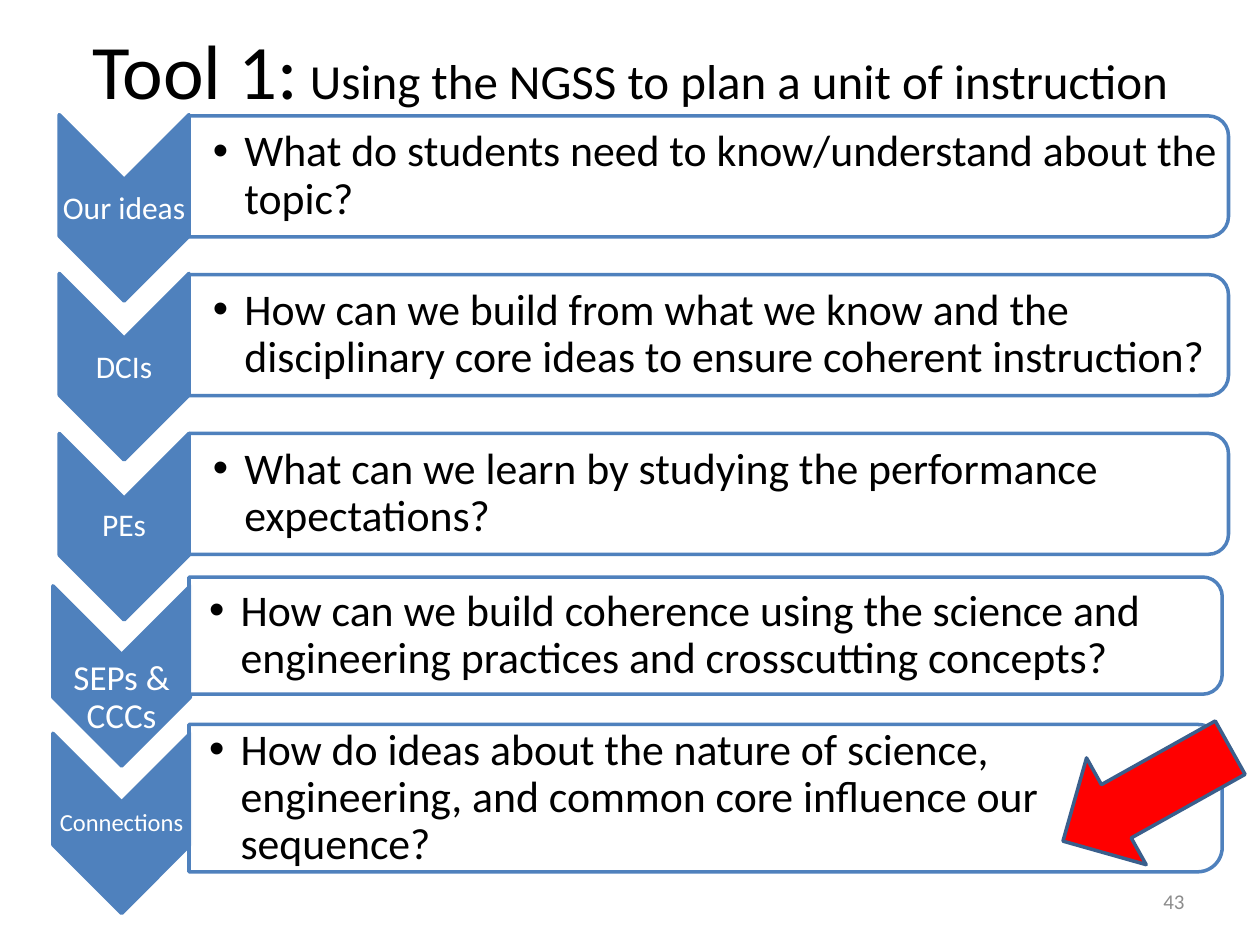
import pptx
import pptx.util
import pptx.dml.color
import pptx.enum.shapes
import pptx.enum.text
import pptx.oxml
import pptx.oxml.ns
import lxml.etree

Inches = pptx.util.Inches
Pt = pptx.util.Pt
RGBColor = pptx.dml.color.RGBColor
SHAPE = pptx.enum.shapes.MSO_SHAPE
ALIGN = pptx.enum.text.PP_ALIGN
qn = pptx.oxml.ns.qn

BLUE = RGBColor(0x4F, 0x81, 0xBD)
DARK_BLUE = RGBColor(0x3A, 0x5F, 0x8C)
RED = RGBColor(0xFF, 0x00, 0x00)
WHITE = RGBColor(0xFF, 0xFF, 0xFF)
BLACK = RGBColor(0x00, 0x00, 0x00)
GRAY = RGBColor(0x8C, 0x8C, 0x8C)

prs = pptx.Presentation()
prs.slide_width, prs.slide_height = Inches(10), Inches(7.5)
s = prs.slides.add_slide(prs.slide_layouts[6])


def add_shape(kind, box, rotation, fill, line):
    sp = s.shapes.add_shape(kind, *[Inches(v) for v in box])
    sp.rotation = rotation
    sp.shadow.inherit = False
    sp.fill.solid()
    sp.fill.fore_color.rgb = fill
    sp.line.color.rgb = line
    sp.line.width = Pt(2)
    return sp


def add_text(box, margins, align, runs):
    tf = s.shapes.add_textbox(*[Inches(v) for v in box]).text_frame
    tf.word_wrap = True
    tf.vertical_anchor = pptx.enum.text.MSO_ANCHOR.MIDDLE
    (tf.margin_left, tf.margin_top,
     tf.margin_right, tf.margin_bottom) = [Inches(v) for v in margins]
    p = tf.paragraphs[0]
    p.alignment = align
    for text, size, color in runs:
        r = p.add_run()
        r.text = text
        r.font.name = "Calibri"
        r.font.size = Pt(size)
        r.font.color.rgb = color
    return p


# Title
add_text((0.3, -0.08, 9.4, 1.25), (0.1, 0.05, 0.1, 0.05), ALIGN.CENTER,
         [("Tool 1:", 44, BLACK),
          (" Using the NGSS to plan a unit of instruction", 28, BLACK)])

# Steps: label, label size, label top, chevron box, panel box, question
# Boxes are given as they appear, after the quarter turn
UPPER_X, LOWER_X = (0.47, 1.03, 8.25), (0.42, 1.09, 8.2)
steps = [
    ("Our ideas", 18, 1.44, 0.91, 1.48, 0.92, 0.96, UPPER_X,
     "What do students need to know/understand about the topic?"),
    ("DCIs", 18, 2.7, 2.17, 1.48, 2.18, 0.96, UPPER_X,
     "How can we build from what we know and the disciplinary core ideas "
     "to ensure coherent instruction?"),
    ("PEs", 18, 3.96, 3.44, 1.48, 3.44, 0.96, UPPER_X,
     "What can we learn by studying the performance expectations?"),
    ("SEPs & CCCs", 20, 5.32, 4.65, 1.43, 4.58, 0.93, LOWER_X,
     "How can we build coherence using the science and engineering "
     "practices and crosscutting concepts?"),
    ("Connections", 14, 6.32, 5.82, 1.43, 5.75, 1.17, LOWER_X,
     "How do ideas about the nature of science, engineering, and common "
     "core influence our sequence?"),
]
PANEL_X = 1.5

for (label, size, label_y, chevron_y, chevron_h, panel_y, panel_h,
     (chevron_x, chevron_w, panel_w), question) in steps:
    # Chevron and its label
    shift = (chevron_h - chevron_w) / 2
    add_shape(SHAPE.CHEVRON,
              (chevron_x - shift, chevron_y + shift, chevron_h, chevron_w),
              90, BLUE, BLUE)
    p = add_text((chevron_x, label_y, chevron_w, 0.44), [0.01] * 4,
                 ALIGN.CENTER, [(label, size, WHITE)])
    p.line_spacing = 0.9

    # Rounded panel, slightly see-through
    shift = (panel_w - panel_h) / 2
    sp = add_shape(SHAPE.ROUND_2_SAME_RECTANGLE,
                   (PANEL_X + shift, panel_y - shift, panel_h, panel_w),
                   90, WHITE, BLUE)
    clr = sp.fill._xPr.find(qn("a:solidFill"))[0]
    lxml.etree.SubElement(clr, qn("a:alpha")).set("val", "90000")

    # Bulleted question
    inset = 0.19 if panel_w == 8.25 else 0.16
    p = add_text((PANEL_X, panel_y + 0.04, panel_w - 0.06, panel_h - 0.08),
                 (inset, 0.02, 0.02, 0.02), ALIGN.LEFT,
                 [(question, 25, BLACK)])
    p.line_spacing = 0.9
    pPr = p._p.get_or_add_pPr()
    pPr.set("marL", str(Inches(0.25)))
    pPr.set("indent", str(-Inches(0.25)))
    lxml.etree.SubElement(pPr, qn("a:buFont")).set("typeface", "Arial")
    lxml.etree.SubElement(pPr, qn("a:buChar")).set("char", "•")

# Red pointer arrow
add_shape(SHAPE.LEFT_ARROW, (8.34, 5.82, 1.52, 0.97), 330.8, RED, DARK_BLUE)

# Slide number
add_text((7.17, 6.95, 2.33, 0.4), (0.1, 0.05, 0.1, 0.05), ALIGN.RIGHT,
         [("43", 12, GRAY)])

prs.save("out.pptx")
